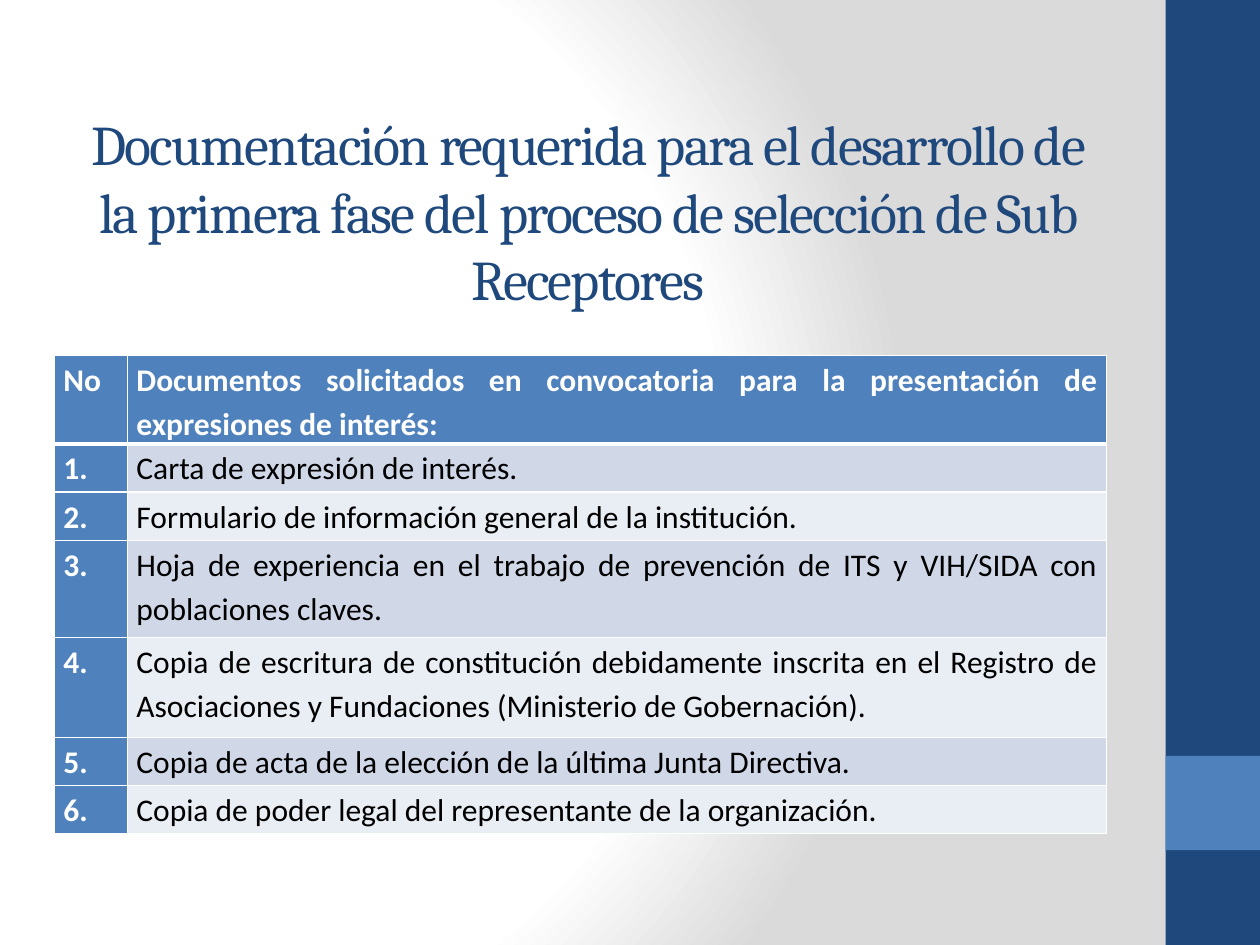
from lxml.etree import SubElement
from pptx import Presentation
from pptx.dml.color import RGBColor
from pptx.enum.shapes import MSO_SHAPE
from pptx.enum.text import MSO_ANCHOR, PP_ALIGN
from pptx.oxml import parse_xml
from pptx.oxml.ns import qn
from pptx.util import Cm, Pt

NAVY, BLUE, WHITE, BLACK = "1F497D", "4F81BD", "FFFFFF", "000000"
BANDS = ["D0D8E8", "E9EDF4"]
GRADIENT = """
<a:gradFill xmlns:a="http://schemas.openxmlformats.org/drawingml/2006/main" rotWithShape="1">
  <a:gsLst>
    <a:gs pos="0"><a:srgbClr val="FFFFFF"/></a:gs>
    <a:gs pos="75000"><a:srgbClr val="FFFFFF"/></a:gs>
    <a:gs pos="100000"><a:srgbClr val="DADADA"/></a:gs>
  </a:gsLst>
  <a:path path="circle"><a:fillToRect l="20000" t="50000" r="100000" b="50000"/></a:path>
</a:gradFill>"""

HEADER = "Documentos solicitados en convocatoria para la presentación de expresiones de interés:"
# Each document with the height of its row in cm
DOCUMENTS = [
    ("Carta de expresión de interés.", 0.97),
    ("Formulario de información general de la institución.", 0.97),
    ("Hoja de experiencia en el trabajo de prevención de ITS y VIH/SIDA con "
     "poblaciones claves.", 1.96),
    ("Copia de escritura de constitución debidamente inscrita en el Registro de "
     "Asociaciones y Fundaciones (Ministerio de Gobernación).", 2.01),
    ("Copia de acta de la elección de la última Junta Directiva.", 0.97),
    ("Copia de poder legal del representante de la organización.", 0.97),
]


def rgb(value):
    return RGBColor.from_string(value)


class SlideBuilder:
    title_font = "Cambria"
    body_font = "Calibri"

    def __init__(self, slide):
        self.s = slide

    def background(self):
        fill = self.s.background.fill
        fill.solid()
        solid = self.s.element.find(".//" + qn("a:solidFill"))
        solid.getparent().replace(solid, parse_xml(GRADIENT))

    def bar(self, left, top, width, height, color):
        sp = self.s.shapes.add_shape(MSO_SHAPE.RECTANGLE, Cm(left), Cm(top), Cm(width), Cm(height))
        sp.shadow.inherit = False
        sp.fill.solid()
        sp.fill.fore_color.rgb = rgb(color)
        sp.line.fill.background()

    def title(self, text, left, top, width, height):
        sp = self.s.shapes.title
        sp.left, sp.top, sp.width, sp.height = Cm(left), Cm(top), Cm(width), Cm(height)
        tf = sp.text_frame
        tf.text = text
        tf.word_wrap = True
        tf.vertical_anchor = MSO_ANCHOR.MIDDLE
        p = tf.paragraphs[0]
        p.alignment = PP_ALIGN.CENTER
        p.font.name, p.font.size = self.title_font, Pt(32)
        p.font.color.rgb = rgb(NAVY)
        p.runs[0].font._element.set("spc", "-100")

    def borders(self, cell, **widths):
        """Draw white cell borders, 1 pt wide unless a side (L, R, T, B) says otherwise."""
        tc_pr = cell._tc.get_or_add_tcPr()
        for side in "LRTB":
            ln = SubElement(tc_pr, qn("a:ln" + side), w=str(Pt(widths.get(side, 1))))
            SubElement(SubElement(ln, qn("a:solidFill")), qn("a:srgbClr"), val=WHITE)

    def cell(self, cell, text, fill, color, bold):
        cell.fill.solid()
        cell.fill.fore_color.rgb = rgb(fill)
        cell.margin_left = cell.margin_right = Cm(0.18)
        cell.margin_top = cell.margin_bottom = 0
        cell.text = text
        p = cell.text_frame.paragraphs[0]
        p.alignment = PP_ALIGN.JUSTIFY
        p.line_spacing = 1.15
        p.font.name, p.font.size, p.font.bold = self.body_font, Pt(18), bold
        p.font.color.rgb = rgb(color)

    def table(self, rows, heights, widths, left, top):
        tbl = self.s.shapes.add_table(len(rows), len(widths), Cm(left), Cm(top),
                                      Cm(sum(widths)), Cm(sum(heights))).table
        for column, width in zip(tbl.columns, widths):
            column.width = Cm(width)
        for i, (row, height) in enumerate(zip(rows, heights)):
            tbl.rows[i].height = Cm(height)
            edges = {0: {"B": 3}, 1: {"T": 3}}.get(i, {})
            for j, text in enumerate(row):
                heading = i == 0 or j == 0
                cell = tbl.cell(i, j)
                self.borders(cell, **edges)
                self.cell(cell, text, BLUE if heading else BANDS[(i - 1) % 2],
                          WHITE if heading else BLACK, heading)


def main():
    prs = Presentation()
    prs.slide_width, prs.slide_height = Cm(25.4), Cm(19.05)
    b = SlideBuilder(prs.slides.add_slide(prs.slide_layouts[5]))
    b.background()
    b.bar(23.5, 0, 1.9, 19.05, NAVY)
    b.bar(23.5, 15.24, 1.9, 1.9, BLUE)
    b.title("Documentación requerida para el desarrollo de la primera fase del proceso "
            "de selección de Sub Receptores", 1.27, 2.36, 21.16, 3.78)
    rows = [("No", HEADER)] + [(f"{n}.", text) for n, (text, _) in enumerate(DOCUMENTS, 1)]
    heights = [0.97] + [height for _, height in DOCUMENTS]
    b.table(rows, heights, [1.47, 19.74], 1.1, 7.17)
    prs.save("out.pptx")


if __name__ == "__main__":
    main()
